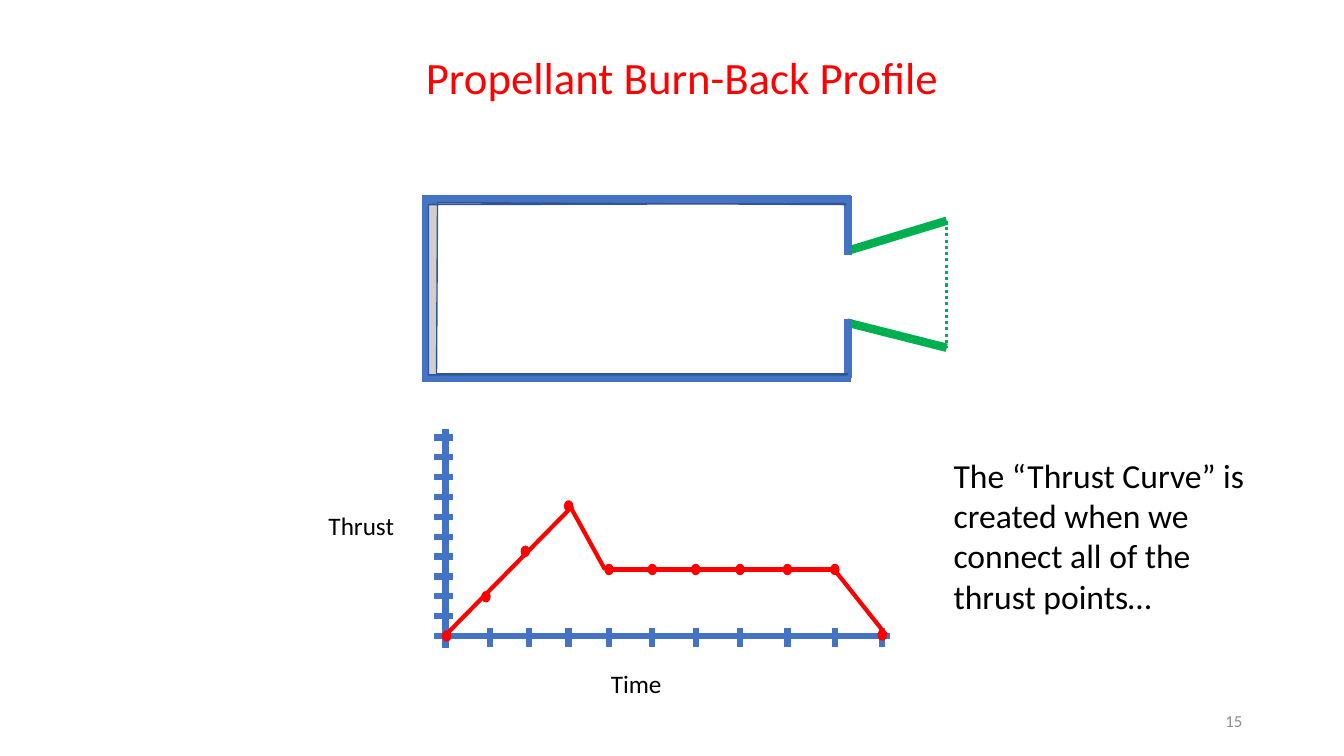
from dataclasses import dataclass

from lxml.etree import SubElement
from pptx import Presentation
from pptx.dml.color import RGBColor
from pptx.enum.dml import MSO_LINE
from pptx.enum.shapes import MSO_CONNECTOR, MSO_SHAPE
from pptx.enum.text import MSO_ANCHOR, PP_ALIGN
from pptx.oxml.ns import qn
from pptx.util import Inches, Pt


@dataclass(frozen=True)
class Theme:
    font: str = "Calibri"
    red: RGBColor = RGBColor(0xFF, 0x00, 0x00)
    blue: RGBColor = RGBColor(0x44, 0x72, 0xC4)
    dark_blue: RGBColor = RGBColor(0x32, 0x54, 0x91)
    green: RGBColor = RGBColor(0x00, 0xB0, 0x50)
    propellant: RGBColor = RGBColor(0xD0, 0xCE, 0xCE)
    black: RGBColor = RGBColor(0x00, 0x00, 0x00)
    gray: RGBColor = RGBColor(0x8C, 0x8C, 0x8C)
    title_size: int = 32
    body_size: int = 24
    label_size: int = 18
    number_size: int = 12


theme = Theme()


def add_line(shapes, start, end, color, width):
    line = shapes.add_connector(MSO_CONNECTOR.STRAIGHT, *map(Inches, start + end))
    line.line.color.rgb = color
    line.line.width = Pt(width)
    SubElement(line._element.spPr, qn("a:effectLst"))
    return line


def add_text(page, area, text, size, color, align=PP_ALIGN.LEFT, anchor=MSO_ANCHOR.TOP):
    box = page.shapes.add_textbox(*map(Inches, area))
    box.text_frame.word_wrap = True
    box.text_frame.vertical_anchor = anchor
    para = box.text_frame.paragraphs[0]
    para.alignment = align
    span = para.add_run()
    span.text = text
    span.font.name = theme.font
    span.font.size = Pt(size)
    span.font.color.rgb = color


deck = Presentation()
deck.slide_width = Inches(13.33)
deck.slide_height = Inches(7.5)
page = deck.slides.add_slide(deck.slide_layouts[6])

# Motor casing and nozzle
motor = page.shapes.add_group_shape().shapes
nozzle_walls = [((9.39, 2.19), (8.4, 2.49)), ((9.39, 3.45), (8.4, 3.2))]
casing_walls = [
    ((4.19, 1.98), (8.44, 1.98)),
    ((4.19, 3.75), (8.44, 3.75)),
    ((4.23, 2.01), (4.23, 3.75)),
    ((8.41, 1.94), (8.41, 2.53)),
    ((8.41, 3.16), (8.41, 3.75)),
]
for walls, color in ((nozzle_walls, theme.green), (casing_walls, theme.blue)):
    for start, end in walls:
        add_line(motor, start, end, color, 6)
nozzle_exit = add_line(motor, (9.39, 2.19), (9.39, 3.45), theme.green, 2.25)
nozzle_exit.line.dash_style = MSO_LINE.ROUND_DOT

# Remaining propellant
outline = [
    (8.39, 2.03), (4.34, 2.01), (4.33, 3.71), (8.41, 3.71), (8.39, 3.72),
    (4.25, 3.72), (4.25, 2.03), (8.38, 2.02),
]
corners = [(Inches(x), Inches(y)) for x, y in outline]
builder = page.shapes.build_freeform(*corners[0])
builder.add_line_segments(corners[1:], close=True)
propellant = builder.convert_to_shape()
propellant.shadow.inherit = False
propellant.fill.solid()
propellant.fill.fore_color.rgb = theme.propellant
propellant.line.color.rgb = theme.dark_blue
propellant.line.width = Pt(1)

# Thrust and time axes
axes = page.shapes.add_group_shape().shapes
time_ticks = [4.86, 5.25, 5.64, 6.04, 6.47, 6.9, 7.34, 7.81, 8.28, 8.75]
axis_lines = [((4.42, 4.26), (4.42, 6.43)), ((8.83, 6.31), (4.3, 6.31))]
for step in range(10):
    y = 4.34 + step * 0.197
    axis_lines.append(((4.49, y), (4.3, y)))
axis_lines += [((x, 6.42), (x, 6.23)) for x in time_ticks]
for start, end in axis_lines:
    add_line(axes, start, end, theme.blue, 4.5)

# Thrust points, by centre
plateau = [(x, 5.65) for x in time_ticks[3:9]]
thrust_points = [(4.43, 6.31), (4.82, 5.92), (5.21, 5.47), (5.64, 5.02), *plateau, (8.75, 6.3)]
dot_width, dot_height = 0.08, 0.1
for x, y in thrust_points:
    dot = page.shapes.add_shape(
        MSO_SHAPE.OVAL,
        Inches(x - dot_width / 2), Inches(y - dot_height / 2),
        Inches(dot_width), Inches(dot_height),
    )
    dot.shadow.inherit = False
    dot.fill.solid()
    dot.fill.fore_color.rgb = theme.red
    dot.line.color.rgb = theme.red
    dot.line.width = Pt(1)

# Thrust curve
curve = [
    ((4.43, 6.29), (5.68, 5.02)),
    ((6, 5.65), (5.67, 5.05)),
    ((8.24, 5.65), (6.08, 5.65)),
    ((8.79, 6.3), (8.25, 5.62)),
]
for start, end in curve:
    add_line(page.shapes, start, end, theme.red, 3)

# Wording
add_text(page, (3.24, 0.44, 7.05, 0.64), "Propellant Burn-Back Profile",
         theme.title_size, theme.red, PP_ALIGN.CENTER)
add_text(page, (9.36, 4.46, 3.23, 1.72),
         "The “Thrust Curve” is created when we connect all of the thrust points…",
         theme.body_size, theme.black)
add_text(page, (3.16, 5.01, 0.87, 0.4), "Thrust", theme.label_size, theme.black)
add_text(page, (5.96, 6.58, 0.87, 0.4), "Time", theme.label_size, theme.black)
add_text(page, (9.42, 6.95, 3, 0.4), "15", theme.number_size, theme.gray,
         PP_ALIGN.RIGHT, MSO_ANCHOR.MIDDLE)

deck.save("out.pptx")
